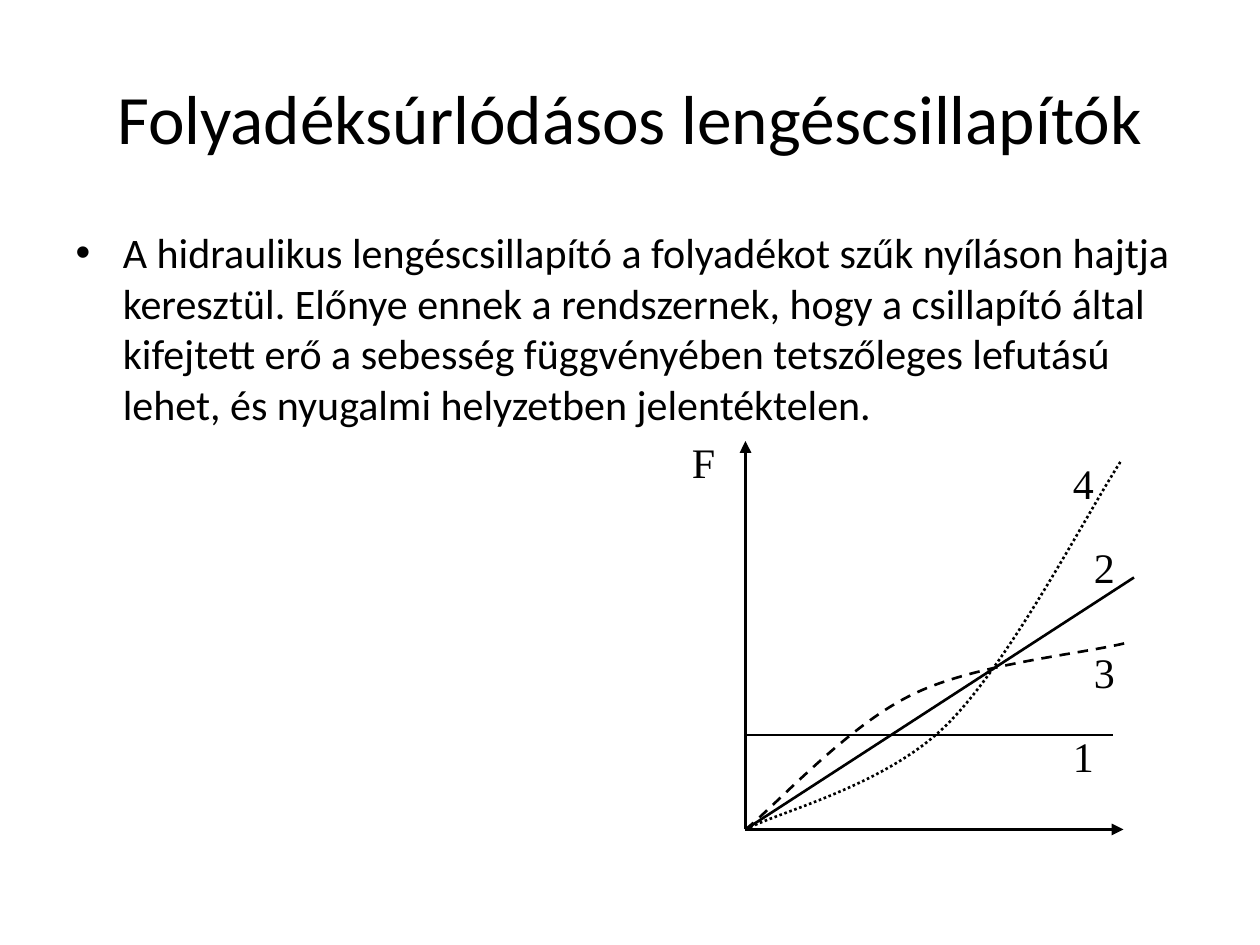
from pptx import Presentation
from pptx.dml.color import RGBColor
from pptx.enum.dml import MSO_LINE
from pptx.enum.shapes import MSO_CONNECTOR
from pptx.enum.text import MSO_ANCHOR, MSO_AUTO_SIZE, PP_ALIGN
from pptx.oxml.ns import qn
from pptx.oxml.xmlchemy import OxmlElement
from pptx.util import Inches, Pt

STRAIGHT = MSO_CONNECTOR.STRAIGHT
DASH, DOTTED = MSO_LINE.DASH, MSO_LINE.ROUND_DOT
MIDDLE, TOP = MSO_ANCHOR.MIDDLE, MSO_ANCHOR.TOP
CENTER, LEFT = PP_ALIGN.CENTER, PP_ALIGN.LEFT
NO_FIT, GROW = MSO_AUTO_SIZE.NONE, MSO_AUTO_SIZE.SHAPE_TO_FIT_TEXT

CELLS_PER_INCH = 12  # the slide is a grid of 120 columns by 90 rows
INK = "000000"


def grid(*cells):
    return [Inches(cell / CELLS_PER_INCH) for cell in cells]


def color(hex_code):
    return RGBColor.from_string(hex_code)


def write(shape, text, font="Calibri", size=24, align=LEFT, anchor=TOP, fit=NO_FIT, wrap=True):
    frame = shape.text_frame
    frame.word_wrap, frame.auto_size, frame.vertical_anchor = wrap, fit, anchor
    paragraph = frame.paragraphs[0]
    paragraph.alignment = align
    run = paragraph.add_run()
    run.text = text
    run.font.name, run.font.size = font, Pt(size)
    run.font.color.rgb = color(INK)


class DiagramSlide:
    """Holds the slide and the style; every length is in grid cells."""

    axis_width, curve_width = 2.25, 1.5
    label_font = "Times New Roman"

    def __init__(self, slide):
        self.slide = slide
        self.shapes = slide.shapes

    def placeholder(self, index, box, text, **text_format):
        holder = self.slide.placeholders[index]
        holder.left, holder.top, holder.width, holder.height = grid(*box)
        write(holder, text, **text_format)

    def line(self, start, end, width=curve_width):
        connector = self.shapes.add_connector(STRAIGHT, *grid(*start, *end))
        connector.line.color.rgb = color(INK)
        connector.line.width = Pt(width)
        connector._element.spPr.append(OxmlElement("a:effectLst"))
        return connector

    def axis(self, start, end):
        arrow = self.line(start, end, self.axis_width)
        tip = OxmlElement("a:tailEnd")
        tip.set("type", "triangle")
        arrow.line._get_or_add_ln().append(tip)

    def curve(self, start, controls, dash):
        """Draw cubic Bézier pieces; each takes three points of controls."""
        builder = self.shapes.build_freeform(*grid(*start))
        builder.add_line_segments([grid(*point) for point in controls], close=False)
        shape = builder.convert_to_shape()
        segments = list(shape._element.iter(qn("a:lnTo")))
        for first in range(0, len(segments), 3):
            bezier = OxmlElement("a:cubicBezTo")
            segments[first].addprevious(bezier)
            for segment in segments[first:first + 3]:
                bezier.append(segment[0])
                segment.getparent().remove(segment)
        shape.fill.background()
        shape.shadow.inherit = False
        shape.line.color.rgb = color(INK)
        shape.line.width = Pt(self.curve_width)
        shape.line.dash_style = dash

    def label(self, text, column, row, width=4.4):
        box = self.shapes.add_textbox(*grid(column, row, width, 6))
        write(box, text, font=self.label_font, anchor=MIDDLE, fit=GROW, wrap=False)


def main():
    deck = Presentation()
    deck.slide_width, deck.slide_height = grid(120, 90)
    page = DiagramSlide(deck.slides.add_slide(deck.slide_layouts[1]))

    page.placeholder(0, (6, 3.6, 108, 15), "Folyadéksúrlódásos lengéscsillapítók",
                     size=39.6, align=CENTER, anchor=MIDDLE)
    page.placeholder(1, (6, 21, 108, 59.4),
                     "A hidraulikus lengéscsillapító a folyadékot szűk nyíláson hajtja "
                     "keresztül. Előnye ennek a rendszernek, hogy a csillapító által "
                     "kifejtett erő a sebesség függvényében tetszőleges lefutású lehet, "
                     "és nyugalmi helyzetben jelentéktelen.")

    origin = (71, 79)
    page.axis(origin, (71, 42))
    page.axis(origin, (107, 79))
    page.line((71, 70), (106, 70))
    progressive = [(74.2, 77.3), (84.2, 74.9), (90.1, 69.1),
                   (96.1, 63.2), (103.3, 49.3), (106.7, 44)]
    degressive = [(73.7, 76.9), (80.6, 69.2), (86.8, 66.2),
                  (92.8, 63.2), (103.1, 62.3), (107.4, 61.2)]
    page.curve(origin, progressive, DOTTED)
    page.curve(origin, degressive, DASH)
    page.line(origin, (108, 55))

    page.label("F", 64.7, 41, width=4.7)
    for number, column, row in (("1", 101, 69), ("2", 103, 51), ("3", 103, 61), ("4", 101, 43)):
        page.label(number, column, row)

    deck.save("out.pptx")


if __name__ == "__main__":
    main()
